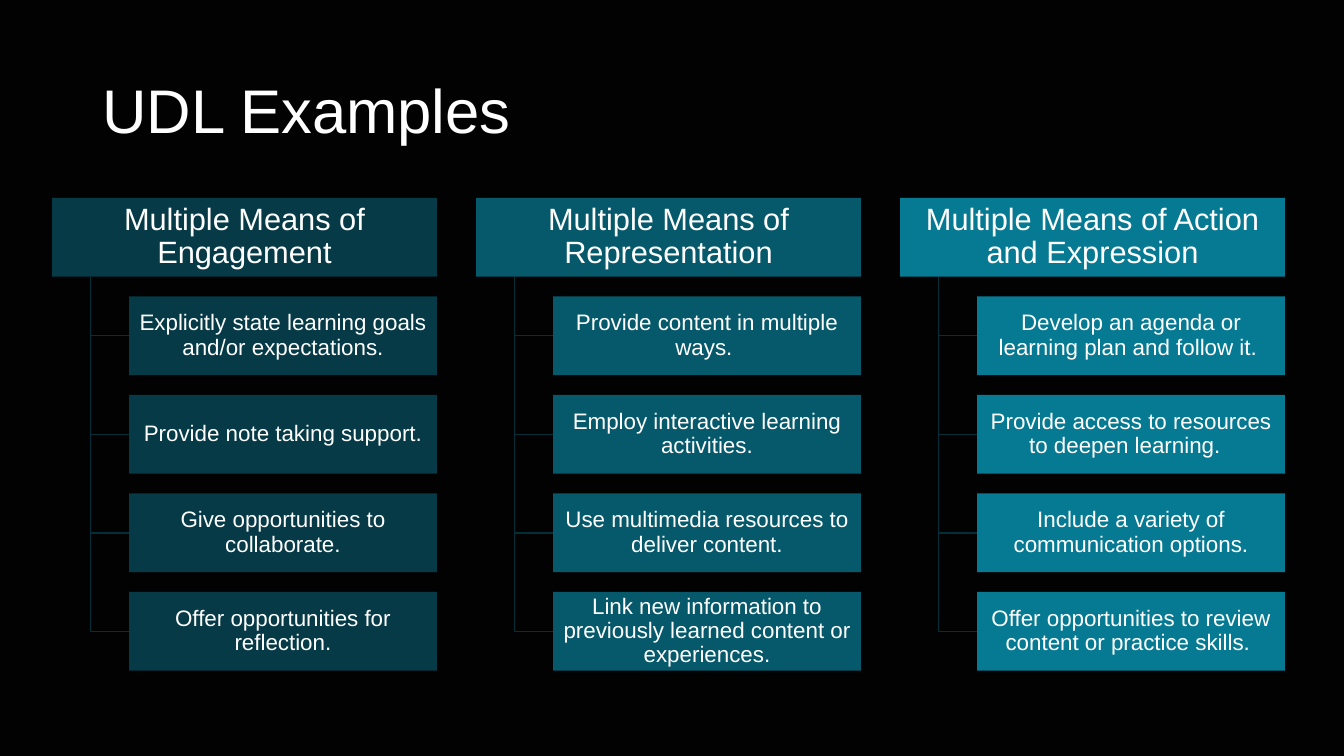
import pptx
import pptx.util
import pptx.dml.color
import pptx.enum.shapes
import pptx.enum.text

Pt = pptx.util.Pt
ALIGN = pptx.enum.text.PP_ALIGN

COLORS = {
    "background": "020202",
    "text": "FFFFFF",
    "branch": "042E38",
    "engagement": "053A46",
    "representation": "06596B",
    "expression": "077A93",
}

COLUMNS = [
    ("engagement", "Multiple Means of Engagement", [
        "Explicitly state learning goals and/or expectations.",
        "Provide note taking support.",
        "Give opportunities to collaborate.",
        "Offer opportunities for reflection.",
    ]),
    ("representation", "Multiple Means of Representation", [
        "Provide content in multiple ways. ",
        "Employ interactive learning activities.",
        "Use multimedia resources to deliver content.",
        "Link new information to previously learned content or experiences.",
    ]),
    ("expression", "Multiple Means of Action and Expression", [
        "Develop an agenda or learning plan and follow it. ",
        "Provide access to resources to deepen learning.  ",
        "Include a variety of communication options.",
        "Offer opportunities to review content or practice skills. ",
    ]),
]


def rgb(name):
    return pptx.dml.color.RGBColor.from_string(COLORS[name])


def set_text(sp, text, size, align, inset_x, inset_y):
    tf = sp.text_frame
    tf.text = text
    tf.word_wrap = True
    tf.vertical_anchor = pptx.enum.text.MSO_ANCHOR.MIDDLE
    tf.margin_left = tf.margin_right = Pt(inset_x)
    tf.margin_top = tf.margin_bottom = Pt(inset_y)
    p = tf.paragraphs[0]
    p.alignment = align
    p.line_spacing = 0.9
    font = p.runs[0].font
    font.name = "Arial"
    font.size = Pt(size)
    font.color.rgb = rgb("text")


def add_title(s, text, x, y, w, h):
    sp = s.shapes.add_textbox(Pt(x), Pt(y), Pt(w), Pt(h))
    set_text(sp, text, 44, ALIGN.LEFT, 7.2, 3.6)


def add_box(s, text, color, size, x, y, w, h, inset_x, inset_y):
    sp = s.shapes.add_shape(pptx.enum.shapes.MSO_SHAPE.RECTANGLE,
                            Pt(x), Pt(y), Pt(w), Pt(h))
    sp.shadow.inherit = False
    sp.fill.solid()
    sp.fill.fore_color.rgb = rgb(color)
    sp.line.fill.background()
    set_text(sp, text, size, ALIGN.CENTER, inset_x, inset_y)


def add_branch(s, x, top, right, bottom):
    builder = s.shapes.build_freeform(Pt(x), Pt(top))
    builder.add_line_segments([(Pt(x), Pt(bottom)), (Pt(right), Pt(bottom))],
                              close=False)
    sp = builder.convert_to_shape()
    sp.shadow.inherit = False
    sp.fill.background()
    sp.line.color.rgb = rgb("branch")
    sp.line.width = Pt(1)


def add_column(s, color, heading, items, x, y, w, h):
    # Rows are separated by a quarter of their height
    row_h = h / (1 + 1.25 * len(items))
    trunk_x, item_x = x + 0.1 * w, x + 0.2 * w

    # Heading
    add_box(s, heading, color, 22, x, y, w, row_h, 3.3, 2.2)

    # Items, each joined to the heading
    for i, item in enumerate(items, start=1):
        item_y = y + i * 1.25 * row_h
        add_branch(s, trunk_x, y + row_h, item_x, item_y + row_h / 2)
        add_box(s, item, color, 16, item_x, item_y, 0.8 * w, row_h, 2.4, 1.6)


def add_hierarchy(s, x, y, w, h):
    gap = 28
    col_w = (w - gap * (len(COLUMNS) - 1)) / len(COLUMNS)
    for i, (color, heading, items) in enumerate(COLUMNS):
        add_column(s, color, heading, items, x + i * (col_w + gap), y, col_w, h)


def main():
    prs = pptx.Presentation()
    prs.slide_width, prs.slide_height = Pt(960), Pt(540)
    s = prs.slides.add_slide(prs.slide_layouts[6])
    s.background.fill.solid()
    s.background.fill.fore_color.rgb = rgb("background")

    add_title(s, "UDL Examples", 66, 28.75, 828, 104.4)
    add_hierarchy(s, 37.2, 141.3, 880.6, 337.8)

    prs.save("out.pptx")


if __name__ == "__main__":
    main()
